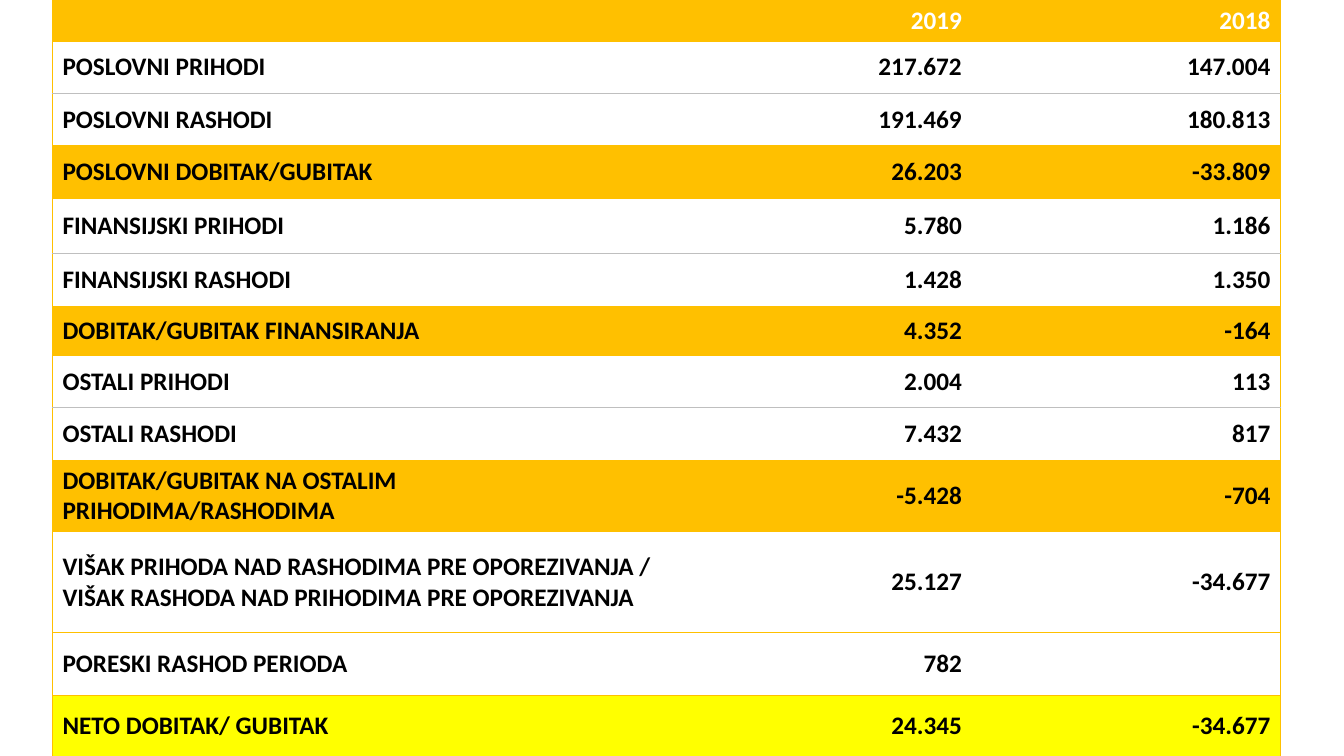
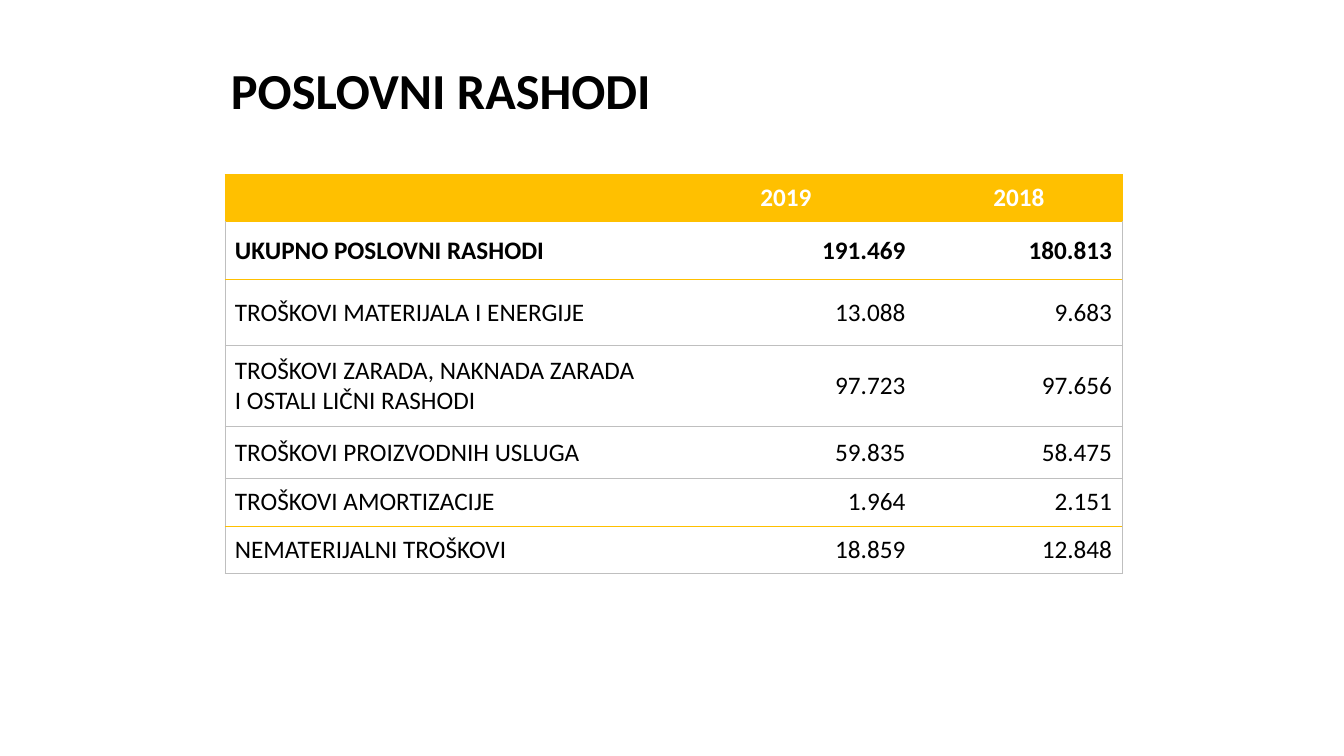
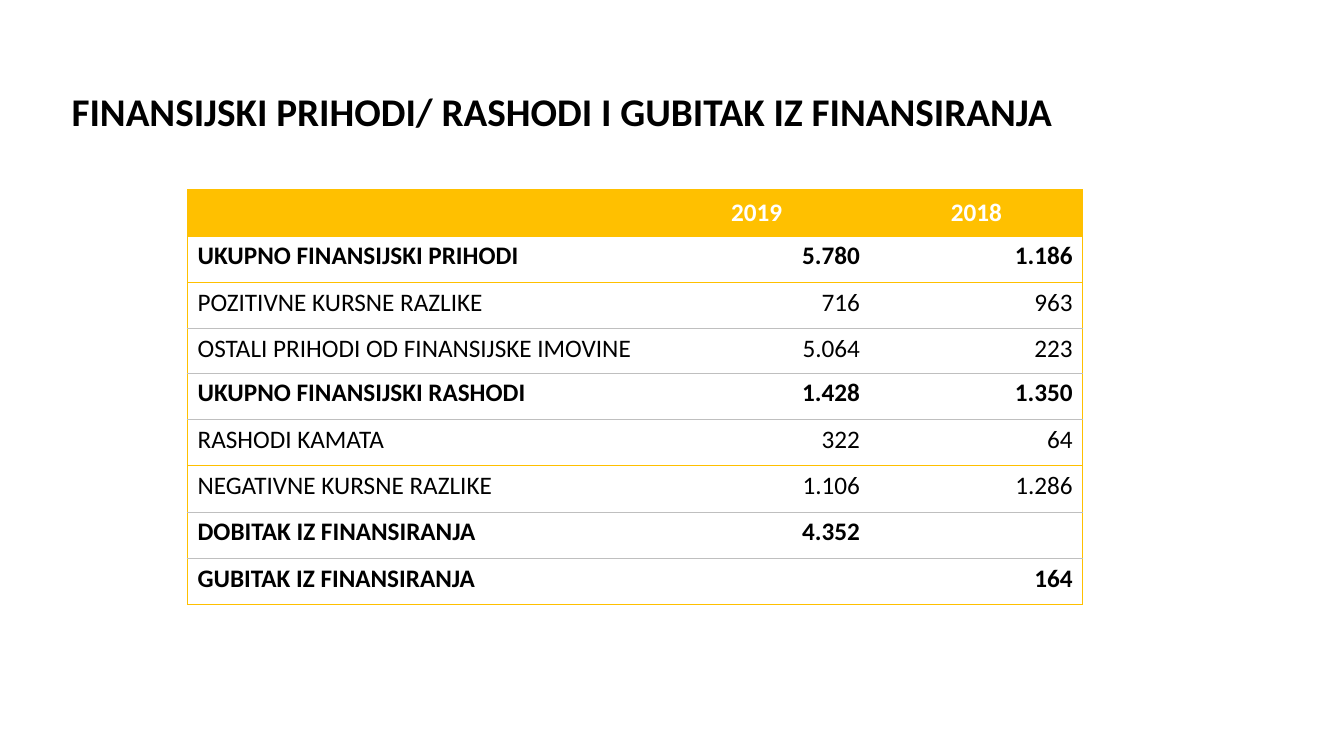
from dataclasses import dataclass

from pptx import Presentation
from pptx.dml.color import RGBColor
from pptx.enum.text import MSO_ANCHOR as Anchor, MSO_AUTO_SIZE as AutoSize, PP_ALIGN as Align
from pptx.oxml.ns import qn
from pptx.util import Inches, Pt
from lxml.etree import SubElement

AMBER = RGBColor(0xFF, 0xC0, 0x00)
YELLOW = RGBColor(0xFF, 0xFF, 0x00)
WHITE = RGBColor(0xFF, 0xFF, 0xFF)
BLACK = RGBColor(0x00, 0x00, 0x00)
GREY = RGBColor(0xBF, 0xBF, 0xBF)
FONT = "Calibri"
TABLE_SIZE = 18
LINE_WIDTH = Pt(0.5)
TITLE_ONLY, BLANK = 5, 6


@dataclass
class Row:
    """One table row: its texts, height, look and the line below it."""
    texts: tuple
    height: float
    line: RGBColor = GREY
    fill: RGBColor = WHITE
    bold: bool = True
    color: RGBColor = BLACK


def header(height):
    """Return the row with the two years."""
    return Row(("", "2019", "2018"), height, AMBER, AMBER, color=WHITE)


INCOME_ROWS = [
    header(0.4),
    Row(("POSLOVNI PRIHODI", "217.672", "147.004"), 0.52),
    Row(("POSLOVNI RASHODI", "191.469", "180.813"), 0.52, AMBER),
    Row(("POSLOVNI DOBITAK/GUBITAK", "26.203", "-33.809"), 0.52, AMBER, AMBER),
    Row(("FINANSIJSKI PRIHODI", "5.780", "1.186"), 0.55),
    Row(("FINANSIJSKI RASHODI", "1.428", "1.350"), 0.52, AMBER),
    Row(("DOBITAK/GUBITAK FINANSIRANJA", "4.352", "-164"), 0.49, AMBER, AMBER),
    Row(("OSTALI PRIHODI", "2.004", "113"), 0.52),
    Row(("OSTALI RASHODI", "7.432", "817"), 0.52, AMBER),
    Row(("DOBITAK/GUBITAK NA OSTALIM PRIHODIMA/RASHODIMA", "-5.428", "-704"), 0.7, AMBER, AMBER),
    Row(("VIŠAK PRIHODA NAD RASHODIMA PRE OPOREZIVANJA / "
         "VIŠAK RASHODA NAD PRIHODIMA PRE OPOREZIVANJA", "25.127", "-34.677"), 1, AMBER),
    Row(("PORESKI RASHOD PERIODA", "782", ""), 0.62, AMBER),
    Row(("NETO DOBITAK/ GUBITAK", "24.345", "-34.677"), 0.62, AMBER, YELLOW),
]

EXPENSE_ROWS = [
    header(0.47),
    Row(("UKUPNO POSLOVNI RASHODI", "191.469", "180.813"), 0.57, AMBER),
    Row(("TROŠKOVI MATERIJALA I ENERGIJE", "13.088", "9.683"), 0.66, bold=False),
    Row(("TROŠKOVI ZARADA, NAKNADA ZARADA I OSTALI LIČNI RASHODI", "97.723", "97.656"),
        0.8, bold=False),
    Row(("TROŠKOVI PROIZVODNIH USLUGA", "59.835", "58.475"), 0.52, bold=False),
    Row(("TROŠKOVI AMORTIZACIJE", "1.964", "2.151"), 0.47, AMBER, bold=False),
    Row(("NEMATERIJALNI TROŠKOVI", "18.859", "12.848"), 0.47, bold=False),
]

FINANCE_ROWS = [
    header(0.46),
    Row(("UKUPNO FINANSIJSKI PRIHODI", "5.780", "1.186"), 0.46, AMBER),
    Row(("POZITIVNE KURSNE RAZLIKE", "716", "963"), 0.46, bold=False),
    Row(("OSTALI PRIHODI OD FINANSIJSKE IMOVINE", "5.064", "223"), 0.44, bold=False),
    Row(("UKUPNO FINANSIJSKI RASHODI", "1.428", "1.350"), 0.46),
    Row(("RASHODI KAMATA", "322", "64"), 0.46, AMBER, bold=False),
    Row(("NEGATIVNE KURSNE RAZLIKE", "1.106", "1.286"), 0.46, bold=False),
    Row(("DOBITAK IZ FINANSIRANJA", "4.352", ""), 0.46),
    Row(("GUBITAK IZ FINANSIRANJA", "", "164"), 0.46, AMBER),
]


def write(para, text, size, color, bold):
    """Add one formatted run to a paragraph."""
    span = para.add_run()
    span.text = text
    span.font.name = FONT
    span.font.size = Pt(size)
    span.font.bold = bold
    span.font.color.rgb = color


def set_borders(cell, left, right, top, bottom):
    """Draw the four cell borders; None leaves a side without a line."""
    properties = cell._tc.get_or_add_tcPr()
    for side, color in (("L", left), ("R", right), ("T", top), ("B", bottom)):
        line = SubElement(properties, qn(f"a:ln{side}"), w=str(LINE_WIDTH))
        if color is None:
            SubElement(line, qn("a:noFill"))
        else:
            solid = SubElement(line, qn("a:solidFill"))
            SubElement(solid, qn("a:srgbClr"), val=str(color))


def add_title(slide, text, box, size):
    """Place and format the title placeholder."""
    title = slide.shapes.title
    title.left, title.top, title.width, title.height = map(Inches, box)
    frame = title.text_frame
    frame.word_wrap = True
    frame.auto_size = AutoSize.NONE
    frame.vertical_anchor = Anchor.MIDDLE
    para = frame.paragraphs[0]
    para.alignment = Align.LEFT
    para.line_spacing = 0.9
    write(para, text, size, BLACK, True)


def add_figures(slide, rows, left, top, widths, year_align=Align.CENTER,
                anchor=Anchor.MIDDLE, edge=AMBER):
    """Build a table of yearly figures with its top left corner at the given point."""
    height = sum(row.height for row in rows)
    table = slide.shapes.add_table(len(rows), len(widths), Inches(left), Inches(top),
                                   Inches(sum(widths)), Inches(height)).table
    table.first_row = table.horz_banding = False
    for column, width in zip(table.columns, widths):
        column.width = Inches(width)
    last = len(widths) - 1
    above = AMBER
    for number, row in enumerate(rows):
        table.rows[number].height = Inches(row.height)
        side = AMBER if row.fill == AMBER else edge
        for index, text in enumerate(row.texts):
            cell = table.cell(number, index)
            set_borders(cell, side if index == 0 else None, side if index == last else None,
                        above, row.line)
            cell.fill.solid()
            cell.fill.fore_color.rgb = row.fill
            cell.vertical_anchor = anchor if number else Anchor.MIDDLE
            para = cell.text_frame.paragraphs[0]
            if index:
                para.alignment = Align.RIGHT if number else year_align
            if text:
                write(para, text, TABLE_SIZE, row.color, row.bold)
        above = row.line


def income_slide(deck):
    """Add the full-height income statement."""
    slide = deck.slides.add_slide(deck.slide_layouts[BLANK])
    add_figures(slide, INCOME_ROWS, 0.52, 0, (6.16, 2.96, 3.06), Align.RIGHT)


def titled_slide(deck, title, title_box, title_size, rows, left, top, widths, **look):
    """Add a slide with a title above a table."""
    slide = deck.slides.add_slide(deck.slide_layouts[TITLE_ONLY])
    add_title(slide, title, title_box, title_size)
    add_figures(slide, rows, left, top, widths, **look)


def main():
    """Build and save the deck."""
    deck = Presentation()
    deck.slide_width, deck.slide_height = Inches(13.33), Inches(7.5)
    income_slide(deck)
    titled_slide(deck, "POSLOVNI RASHODI", (2.19, 0, 10.36, 1.85), 36,
                 EXPENSE_ROWS, 2.23, 1.73, (4.28, 2.57, 2.05), edge=GREY)
    titled_slide(deck, "FINANSIJSKI PRIHODI/ RASHODI I GUBITAK IZ FINANSIRANJA",
                 (0.61, 0.4, 12.16, 1.45), 28,
                 FINANCE_ROWS, 1.86, 1.88, (4.52, 2.25, 2.11), anchor=Anchor.TOP)
    deck.save("out.pptx")


if __name__ == "__main__":
    main()
